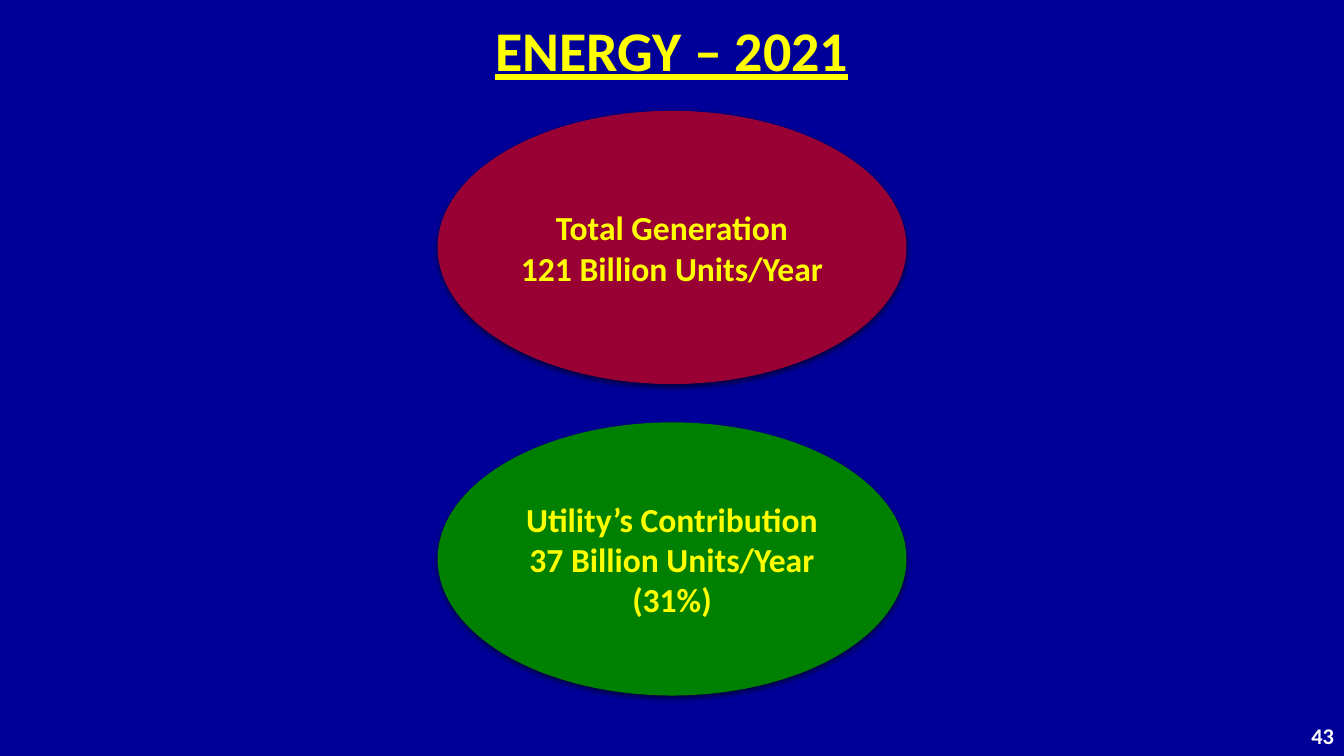
import dataclasses
import lxml.etree
import pptx
import pptx.dml.color
import pptx.enum.shapes
import pptx.enum.text
import pptx.oxml
import pptx.oxml.ns
import pptx.util

Inches, Pt = pptx.util.Inches, pptx.util.Pt
ALIGN = pptx.enum.text.PP_ALIGN


@dataclasses.dataclass(frozen=True)
class Theme:
    font: str = "Calibri"
    background: str = "000099"
    accent: str = "FFFF00"
    total: str = "990033"
    share: str = "008000"
    number: str = "FFFFFF"
    title_size: int = 40
    body_size: int = 24
    number_size: int = 16


theme = Theme()


def color(value):
    return pptx.dml.color.RGBColor.from_string(value)


def write(shape, text, size, ink, align):
    frame = shape.text_frame
    frame.word_wrap = True
    frame.vertical_anchor = pptx.enum.text.MSO_ANCHOR.MIDDLE
    para = frame.paragraphs[0]
    para.text = text
    para.alignment = align
    for span in para.runs:
        span.font.name = theme.font
        span.font.size = Pt(size)
        span.font.bold = True
        span.font.color.rgb = color(ink)
    return para


# Deck and page
deck = pptx.Presentation()
deck.slide_width, deck.slide_height = Inches(13.33), Inches(7.5)
page = deck.slides.add_slide(deck.slide_layouts[5])
page.background.fill.solid()
page.background.fill.fore_color.rgb = color(theme.background)

# Title
title = page.shapes.title
title.width, title.height = Inches(9.09), Inches(0.76)
title.left, title.top = (deck.slide_width - title.width) // 2, Inches(0.15)
frame = title.text_frame
frame.margin_left = frame.margin_right = Inches(0.07)
frame.margin_top = frame.margin_bottom = Inches(0.04)
para = write(title, "ENERGY – 2021", theme.title_size, theme.accent, ALIGN.CENTER)
para.line_spacing = 0.9
para.runs[0].font.underline = True

# Two centred ellipses, one below the other
ellipses = [
    ("Total Generation\n121 Billion Units/Year", theme.total),
    ("Utility’s Contribution\n37 Billion Units/Year\n(31%)", theme.share),
]
width, height = Inches(4.65), Inches(2.71)
first_top, row_step = Inches(1.1), Inches(3.09)
for row, (text, fill) in enumerate(ellipses):
    ellipse = page.shapes.add_shape(
        pptx.enum.shapes.MSO_SHAPE.OVAL,
        (deck.slide_width - width) // 2, first_top + row * row_step, width, height)
    ellipse.fill.solid()
    ellipse.fill.fore_color.rgb = color(fill)
    ellipse.line.fill.background()
    write(ellipse, text, theme.body_size, theme.accent, ALIGN.CENTER)

    # Soft shadow straight below
    ellipse.shadow.inherit = False
    effects = ellipse._element.spPr.find(pptx.oxml.ns.qn("a:effectLst"))
    shadow = lxml.etree.SubElement(
        effects, pptx.oxml.ns.qn("a:outerShdw"), blurRad=str(Pt(4.5)),
        dist=str(Pt(1.5)), dir="5400000", algn="ctr", rotWithShape="0")
    tint = lxml.etree.SubElement(shadow, pptx.oxml.ns.qn("a:srgbClr"), val="000000")
    lxml.etree.SubElement(tint, pptx.oxml.ns.qn("a:alpha"), val="63000")

# Page number in the bottom right corner
width, height = Inches(3), Inches(0.4)
number = page.shapes.add_textbox(
    deck.slide_width - width, deck.slide_height - height, width, height)
write(number, "43", theme.number_size, theme.number, ALIGN.RIGHT)

deck.save("out.pptx")
